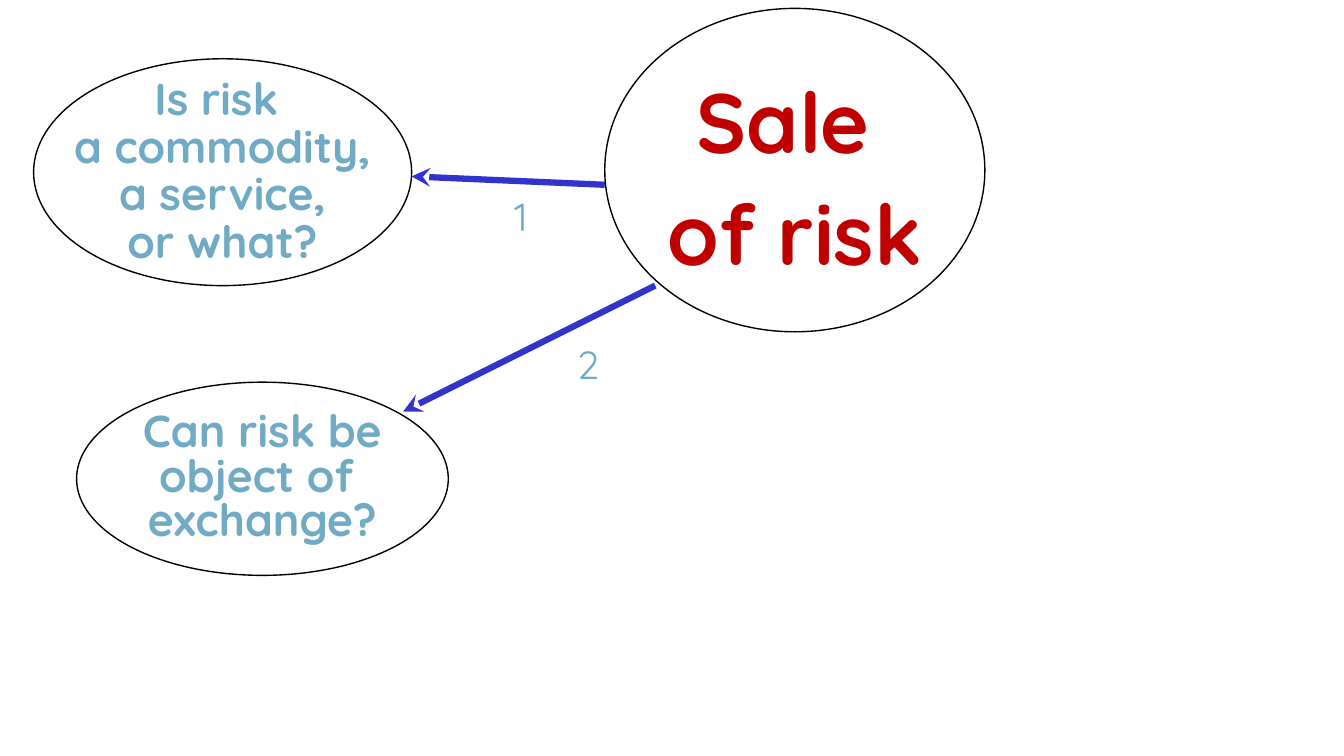
"""Build the slide on the sale of risk and the two questions it raises."""
from dataclasses import dataclass

from lxml.etree import SubElement
from pptx import Presentation
from pptx.dml.color import RGBColor
from pptx.enum.shapes import MSO_CONNECTOR as Connector, MSO_SHAPE as Preset
from pptx.enum.text import MSO_ANCHOR as Anchor, PP_ALIGN as Align
from pptx.oxml.ns import qn
from pptx.slide import Slide
from pptx.text.text import TextFrame
from pptx.util import Emu, Pt

EMU_PER_PX = 9525
FONT = "Quicksand"
COLOURS = {"white": "FFFFFF", "outline": "000000", "arrow": "3333CC",
           "topic": "C00000", "question": "70AAC4"}


@dataclass(frozen=True)
class Bubble:
    left: int
    top: int
    width: int
    height: int
    lines: tuple[str, ...]
    size: int
    spacing: int
    colour: str


@dataclass(frozen=True)
class Arrow:
    start: tuple[int, int]
    end: tuple[int, int]


@dataclass(frozen=True)
class Label:
    left: int
    top: int
    text: str


ARROWS = (Arrow((624, 272), (384, 392)), Arrow((576, 176), (392, 168)))
BUBBLES = (
    Bubble(576, 8, 362, 308, ("Sale ", "of risk"), 60, 80, "topic"),
    Bubble(73, 364, 354, 184, ("Can risk be", "object of ", "exchange?"),
           32, 32, "question"),
    Bubble(32, 56, 360, 216,
           ("Is risk ", "a commodity,", " a service, ", "or what?"),
           32, 34, "question"),
)
LABELS = (Label(520, 319, "2"), Label(456, 178, "1"))


def px(*lengths: int) -> list[Emu]:
    return [Emu(length * EMU_PER_PX) for length in lengths]


def rgb(name: str) -> RGBColor:
    return RGBColor.from_string(COLOURS[name])


def format_text(frame: TextFrame, size: int, colour: str, bold: bool,
                spacing: int | None = None) -> None:
    for para in frame.paragraphs:
        para.alignment = Align.CENTER
        if spacing:
            para.line_spacing = Pt(spacing)
        for span in para.runs:
            span.font.name = FONT
            span.font.size = Pt(size)
            span.font.bold = bold
            span.font.color.rgb = rgb(colour)


def draw_arrow(page: Slide, arrow: Arrow) -> None:
    line = page.shapes.add_connector(
        Connector.STRAIGHT, *px(*arrow.start, *arrow.end))
    line.line.color.rgb = rgb("arrow")
    line.line.width = Pt(4.5)
    SubElement(line.line._get_or_add_ln(), qn("a:tailEnd"), type="stealth")
    SubElement(line._element.spPr, qn("a:effectLst"))


def draw_bubble(page: Slide, bubble: Bubble) -> None:
    oval = page.shapes.add_shape(
        Preset.OVAL, *px(bubble.left, bubble.top, bubble.width, bubble.height))
    oval.shadow.inherit = False
    oval.fill.solid()
    oval.fill.fore_color.rgb = rgb("white")
    oval.line.color.rgb = rgb("outline")
    oval.line.width = Pt(1)
    frame = oval.text_frame
    frame.text = "\n".join(bubble.lines)
    frame.word_wrap = False
    frame.vertical_anchor = Anchor.MIDDLE
    format_text(frame, bubble.size, bubble.colour, True, bubble.spacing)


def draw_label(page: Slide, label: Label) -> None:
    box = page.shapes.add_textbox(*px(label.left, label.top, 80, 69))
    box.text_frame.text = label.text
    box.text_frame.word_wrap = True
    format_text(box.text_frame, 28, "question", False)


def main() -> None:
    deck = Presentation()
    deck.slide_width, deck.slide_height = px(1280, 720)
    page = deck.slides.add_slide(deck.slide_layouts[6])
    for arrow in ARROWS:
        draw_arrow(page, arrow)
    for bubble in BUBBLES:
        draw_bubble(page, bubble)
    for label in LABELS:
        draw_label(page, label)
    deck.save("out.pptx")


if __name__ == "__main__":
    main()
